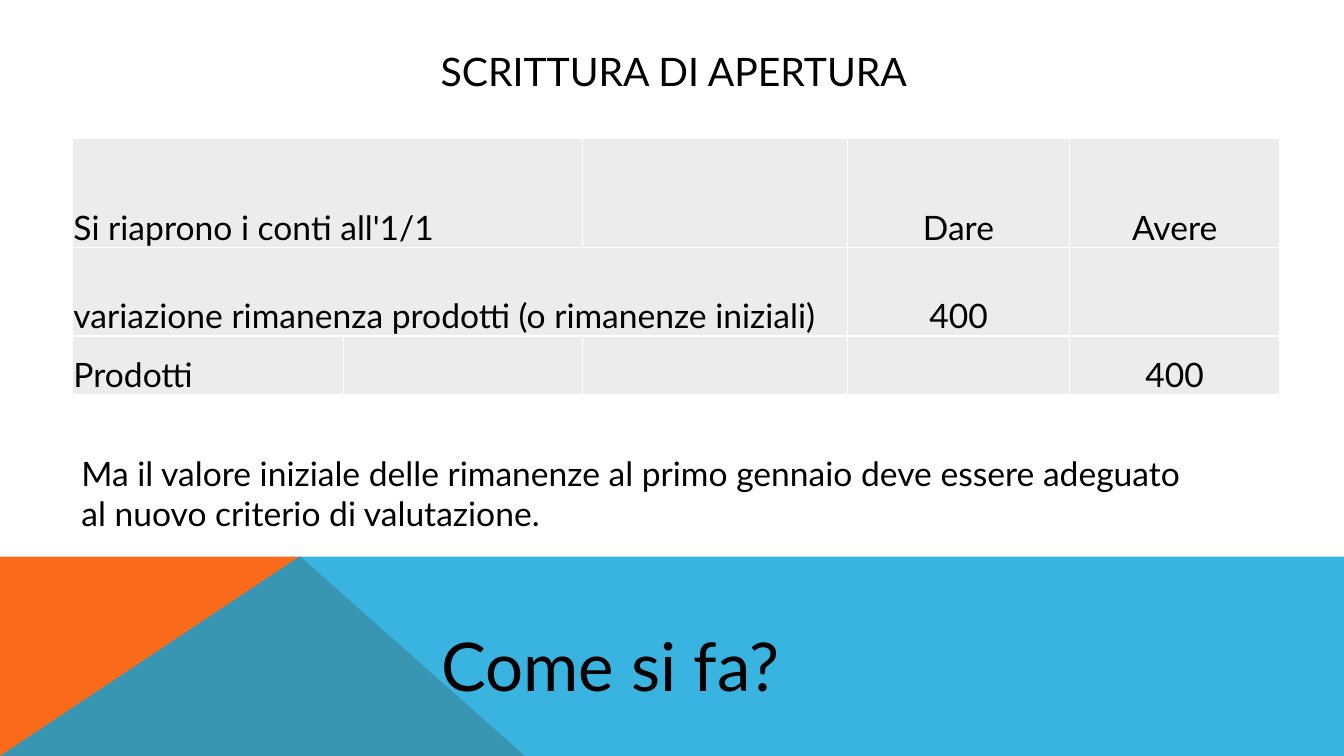
import dataclasses
import typing

import lxml.etree
import pptx
import pptx.dml.color
import pptx.enum.text
import pptx.oxml.ns
import pptx.util

Pt = pptx.util.Pt
ALIGN = pptx.enum.text.PP_ALIGN
ANCHOR = pptx.enum.text.MSO_ANCHOR
AUTO_SIZE = pptx.enum.text.MSO_AUTO_SIZE
qn = pptx.oxml.ns.qn

COLOURS = {
    "orange": "F96A1B",
    "blue": "08A1D9",
    "cell": "ECECEC",
    "border": "FFFFFF",
    "text": "000000",
}
FONT = "Lato"
SLIDE_WIDTH, SLIDE_HEIGHT, BAND_TOP = 960, 540, 397.5
COLUMN_WIDTHS = (193.7, 170.6, 189.4, 158.4, 150.4)
ROW_HEIGHTS = (77.8, 63.4, 41.8)


@dataclasses.dataclass(frozen=True)
class Band:
    points: tuple[tuple[float, float], ...]
    colour: str
    opacity: int = 100


@dataclasses.dataclass(frozen=True)
class Note:
    text: str
    left: float
    top: float
    width: float
    height: float
    size: float


@dataclasses.dataclass(frozen=True)
class Entry:
    row: int
    column: int
    text: str
    span: int = 1


BANDS = (
    Band(((0, SLIDE_HEIGHT), (0, BAND_TOP), (214.5, BAND_TOP), (375, SLIDE_HEIGHT)), "orange"),
    Band(((0, SLIDE_HEIGHT), (214, BAND_TOP), (SLIDE_WIDTH, BAND_TOP),
          (SLIDE_WIDTH, SLIDE_HEIGHT)), "blue", 80),
)
ENTRIES = (
    Entry(0, 0, "Si riaprono i conti all'1/1", 2),
    Entry(0, 3, "Dare"),
    Entry(0, 4, "Avere"),
    Entry(1, 0, "variazione rimanenza prodotti (o rimanenze iniziali)", 3),
    Entry(1, 3, "400"),
    Entry(2, 0, "Prodotti"),
    Entry(2, 4, "400"),
)
NOTES = (
    Note("Ma il valore iniziale delle rimanenze al primo gennaio deve essere adeguato "
         "al nuovo criterio di valutazione.", 51.1, 319.7, 811.4, 65.5, 24),
    Note("Come si fa?", 308.2, 442.1, 263.5, 65.5, 48),
)


def rgb(name: str) -> pptx.dml.color.RGBColor:
    return pptx.dml.color.RGBColor.from_string(COLOURS[name])


def write(frame: typing.Any, text: str, size: float, align: ALIGN = ALIGN.LEFT) -> None:
    paragraph = frame.paragraphs[0]
    paragraph.alignment = align
    run = paragraph.add_run()
    run.text = text
    run.font.name = FONT
    run.font.size = Pt(size)
    run.font.color.rgb = rgb("text")


def draw_band(slide: typing.Any, band: Band) -> None:
    points = [(Pt(x), Pt(y)) for x, y in band.points]
    builder = slide.shapes.build_freeform(*points[0])
    builder.add_line_segments(points[1:], close=True)
    shape = builder.convert_to_shape()
    shape.shadow.inherit = False
    shape.line.fill.background()
    shape.fill.solid()
    shape.fill.fore_color.rgb = rgb(band.colour)
    if band.opacity < 100:
        colour = shape.fill._xPr.find(".//" + qn("a:srgbClr"))
        lxml.etree.SubElement(colour, qn("a:alpha"), val=str(band.opacity * 1000))


def draw_title(slide: typing.Any) -> None:
    title = slide.shapes.title
    title.left, title.top, title.width, title.height = Pt(86.4), Pt(28.8), Pt(789.8), Pt(43.2)
    title.text_frame.auto_size = AUTO_SIZE.NONE
    title.text_frame.vertical_anchor = ANCHOR.MIDDLE
    write(title.text_frame, "SCRITTURA DI APERTURA", 28, ALIGN.CENTER)


def format_cell(cell: typing.Any) -> None:
    cell.fill.solid()
    cell.fill.fore_color.rgb = rgb("cell")
    cell.vertical_anchor = ANCHOR.BOTTOM
    cell.margin_left = cell.margin_right = cell.margin_top = Pt(0.7)
    cell.margin_bottom = 0
    properties = cell._tc.get_or_add_tcPr()
    for position, side in enumerate(("lnL", "lnR", "lnT", "lnB")):
        border = lxml.etree.Element(qn("a:" + side), w=str(Pt(1)))
        fill = lxml.etree.SubElement(border, qn("a:solidFill"))
        lxml.etree.SubElement(fill, qn("a:srgbClr"), val=COLOURS["border"])
        properties.insert(position, border)


def draw_ledger(slide: typing.Any) -> None:
    ledger = slide.shapes.add_table(
        len(ROW_HEIGHTS), len(COLUMN_WIDTHS), Pt(51.8), Pt(98.9),
        Pt(sum(COLUMN_WIDTHS)), Pt(sum(ROW_HEIGHTS))).table
    ledger.first_row = ledger.horz_banding = False
    for column, width in zip(ledger.columns, COLUMN_WIDTHS):
        column.width = Pt(width)
    for row, height in zip(ledger.rows, ROW_HEIGHTS):
        row.height = Pt(height)
    for cell in ledger.iter_cells():
        format_cell(cell)
    for entry in ENTRIES:
        cell = ledger.cell(entry.row, entry.column)
        if entry.span > 1:
            cell.merge(ledger.cell(entry.row, entry.column + entry.span - 1))
        write(cell.text_frame, entry.text, 24, ALIGN.CENTER if entry.column else ALIGN.LEFT)


def draw_note(slide: typing.Any, note: Note) -> None:
    frame = slide.shapes.add_textbox(
        Pt(note.left), Pt(note.top), Pt(note.width), Pt(note.height)).text_frame
    frame.word_wrap = True
    frame.auto_size = AUTO_SIZE.SHAPE_TO_FIT_TEXT
    write(frame, note.text, note.size)


def main() -> None:
    deck = pptx.Presentation()
    deck.slide_width, deck.slide_height = Pt(SLIDE_WIDTH), Pt(SLIDE_HEIGHT)
    slide = deck.slides.add_slide(deck.slide_layouts.get_by_name("Title Only"))
    for band in BANDS:
        draw_band(slide, band)
    draw_title(slide)
    draw_ledger(slide)
    for note in NOTES:
        draw_note(slide, note)
    deck.save("out.pptx")


if __name__ == "__main__":
    main()
